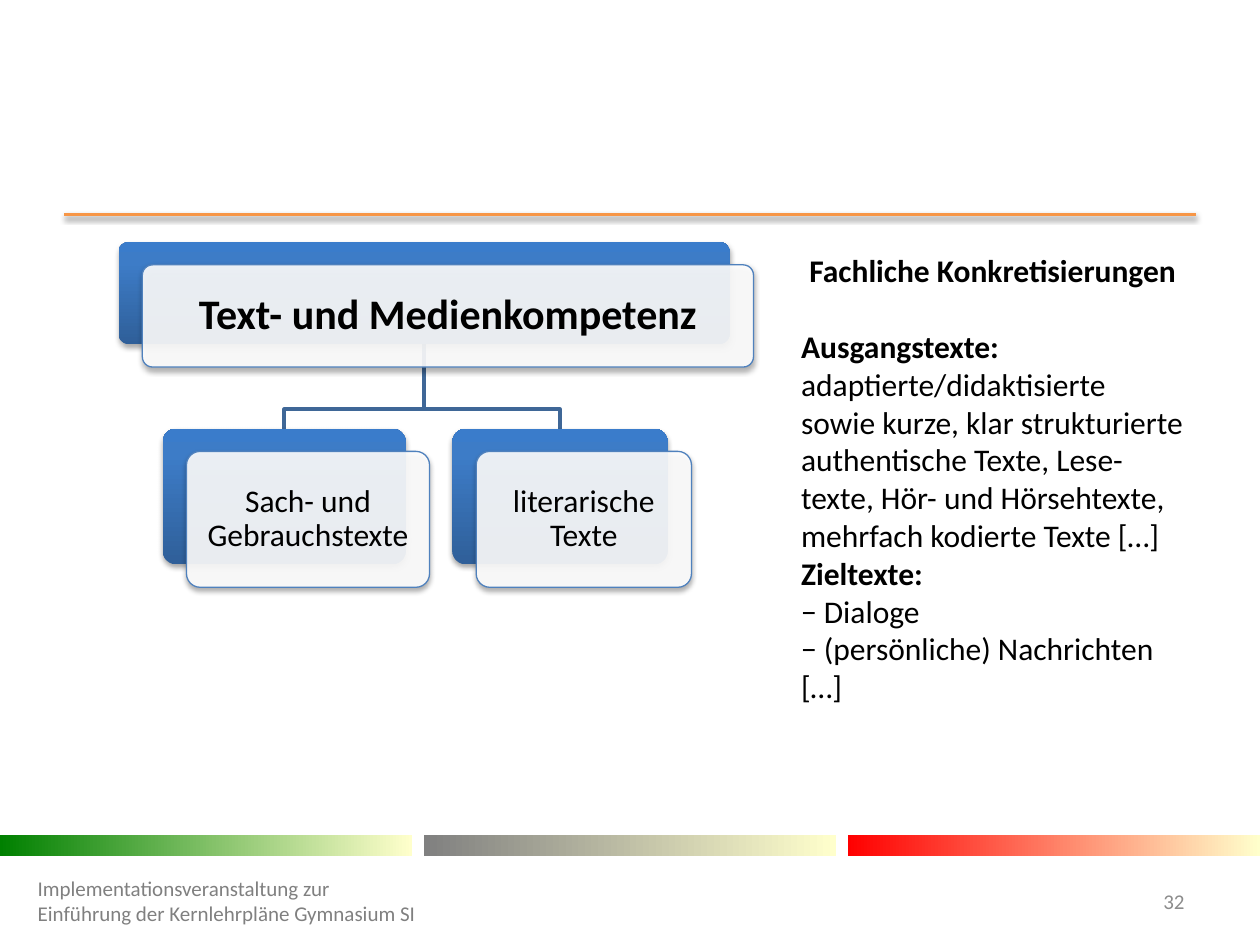
from lxml.etree import SubElement
from pptx import Presentation
from pptx.dml.color import RGBColor as RGB
from pptx.enum.shapes import MSO_CONNECTOR as LINE, MSO_SHAPE as SHAPE
from pptx.enum.text import MSO_ANCHOR as ANCHOR, PP_ALIGN as ALIGN
from pptx.oxml.ns import qn
from pptx.util import Cm, Pt

# Content
ROOT = "Text- und Medienkompetenz"
CHILDREN = ["Sach- und Gebrauchstexte", "literarische Texte"]
DETAILS = [  # text, format
    ("Fachliche Konkretisierungen", dict(bold=True, alignment=ALIGN.CENTER)),
    ("Ausgangstexte:", dict(bold=True, space_before=Pt(22))),
    ("adaptierte/didaktisierte sowie kurze, klar strukturierte authentische "
     "Texte, Lese-texte, Hör- und Hörsehtexte, mehrfach kodierte Texte […]", {}),
    ("Zieltexte:", dict(bold=True)),
    ("− Dialoge", {}),
    ("− (persönliche) Nachrichten", {}),
    ("[…]", {}),
]
FOOTER = "Implementationsveranstaltung zur Einführung der Kernlehrpläne Gymnasium SI"
PAGE = "32"

THEME = dict(
    font="Calibri", heading=24, body=18, small=12,
    text="000000", footer="808080", page="8C8C8C", rule="F79646",
    card="FFFFFF", edge="4F81BD", link="3F6797",
    back=[(0, "2F5F99"), (80, "3D7CC7"), (100, "3A7CCB")],
    bars=[[(0, "008000"), (100, "FFFFCC")],
          [(0, "808080"), (100, "FFFFCC")],
          [(0, "FF0000"), (100, "FFFFCC")]],
)

# Geometry in cm
ROOT_BOX = (2.39, 4.88, 12.32, 2.06)
CHILD_BOXES = [(3.28, 8.64, 4.9, 2.74), (9.12, 8.64, 4.34, 2.74)]
OFFSET = (0.48, 0.46)
BAR_W, BAR_H, BAR_TOP = 8.31, 0.41, 16.84

prs = Presentation()
prs.slide_width, prs.slide_height = Cm(25.4), Cm(19.05)
s = prs.slides.add_slide(prs.slide_layouts[6])


def color(value):
    return RGB.from_string(value)


def add_shadow(sp, alpha=35):
    spPr = sp._element.spPr
    effects = spPr.find(qn("a:effectLst"))
    if effects is None:
        effects = SubElement(spPr, qn("a:effectLst"))
    shadow = SubElement(effects, qn("a:outerShdw"), blurRad=str(Pt(3.1)),
                        dist=str(Pt(1.7)), dir="5400000", rotWithShape="0")
    clr = SubElement(shadow, qn("a:srgbClr"), val="000000")
    SubElement(clr, qn("a:alpha"), val=str(alpha * 1000))


def set_gradient(sp, stops, angle):
    sp.fill.gradient()
    sp.fill.gradient_angle = angle  # counter-clockwise
    gs_list = sp._element.spPr.find(qn("a:gradFill")).find(qn("a:gsLst"))
    for gs in list(gs_list):
        gs_list.remove(gs)
    for pos, value in stops:
        gs = SubElement(gs_list, qn("a:gs"), pos=str(pos * 1000))
        SubElement(gs, qn("a:srgbClr"), val=value)


def add_box(kind, box):
    sp = s.shapes.add_shape(kind, *map(Cm, box))
    sp.shadow.inherit = False
    sp.line.fill.background()
    return sp


def write(tf, lines, size, clr, inset=None, **frame):
    tf.word_wrap = True
    for name, value in frame.items():
        setattr(tf, name, value)
    if inset is not None:
        for side in ("left", "right", "top", "bottom"):
            setattr(tf, f"margin_{side}", Cm(inset))
    for i, (text, fmt) in enumerate(lines):
        p = tf.paragraphs[0] if i == 0 else tf.add_paragraph()
        r = p.add_run()
        r.text = text
        r.font.color.rgb = color(clr)
        for name, value in dict(name=THEME["font"], size=Pt(size),
                                bold=False, alignment=ALIGN.LEFT, **{}).items():
            setattr(p if name == "alignment" else r.font, name, value)
        for name, value in fmt.items():
            setattr(r.font if name == "bold" else p, name, value)


def add_text(box, *args, **frame):
    write(s.shapes.add_textbox(*map(Cm, box)).text_frame, *args, **frame)


def add_node(box, text, size, bold, inset):
    x, y, w, h = box
    back = add_box(SHAPE.ROUNDED_RECTANGLE, box)
    set_gradient(back, THEME["back"], 90)
    card = add_box(SHAPE.ROUNDED_RECTANGLE, (x + OFFSET[0], y + OFFSET[1], w, h))
    card.fill.solid()
    card.fill.fore_color.rgb = color(THEME["card"])
    fill = card._element.spPr.find(qn("a:solidFill"))
    SubElement(fill[0], qn("a:alpha"), val="90000")
    card.line.color.rgb = color(THEME["edge"])
    card.line.width = Pt(0.75)
    for sp in (back, card):
        sp.adjustments[0] = 0.1
        add_shadow(sp)
    fmt = dict(bold=bold, alignment=ALIGN.CENTER, line_spacing=0.9)
    write(card.text_frame, [(text, fmt)], size, THEME["text"], inset,
          vertical_anchor=ANCHOR.MIDDLE)


def add_link(parent, child):
    px, py, pw, ph = parent
    cx, cy, cw, _ = child
    start, end, bend = px + pw / 2, cx + cw / 2, cy - 0.39
    fb = s.shapes.build_freeform(Cm(start), Cm(py + ph))
    fb.add_line_segments([(Cm(start), Cm(bend)), (Cm(end), Cm(bend)),
                          (Cm(end), Cm(cy))], close=False)
    sp = fb.convert_to_shape()
    sp.shadow.inherit = False
    sp.fill.background()
    sp.line.color.rgb = color(THEME["link"])
    sp.line.width = Pt(2)


# Rule below the title area
rule = s.shapes.add_connector(LINE.STRAIGHT, Cm(1.3), Cm(4.32), Cm(24.1), Cm(4.32))
rule.line.color.rgb = color(THEME["rule"])
rule.line.width = Pt(2)
add_shadow(rule, 38)

# Colour bars, evenly spread over the slide width
for i, stops in enumerate(THEME["bars"]):
    bar = add_box(SHAPE.RECTANGLE,
                  (i * (25.4 - BAR_W) / 2, BAR_TOP, BAR_W, BAR_H))
    set_gradient(bar, stops, 0)

# Hierarchy: links first, cards in front
for box in reversed(CHILD_BOXES):
    add_link(ROOT_BOX, box)
add_node(ROOT_BOX, ROOT, THEME["heading"], True, 0.3)
for box, text in zip(CHILD_BOXES, CHILDREN):
    add_node(box, text, THEME["body"], False, 0.25)

# Details, footer and page number
add_text((15.9, 4.93, 8.23, 9.5), DETAILS, THEME["body"], THEME["text"])
add_text((0.51, 17.65, 8.23, 1.02), [(FOOTER, {})], THEME["small"],
         THEME["footer"], vertical_anchor=ANCHOR.MIDDLE)
add_text((22.5, 17.65, 1.63, 1.02), [(PAGE, dict(alignment=ALIGN.RIGHT))],
         THEME["small"], THEME["page"], vertical_anchor=ANCHOR.MIDDLE)

prs.save("out.pptx")
